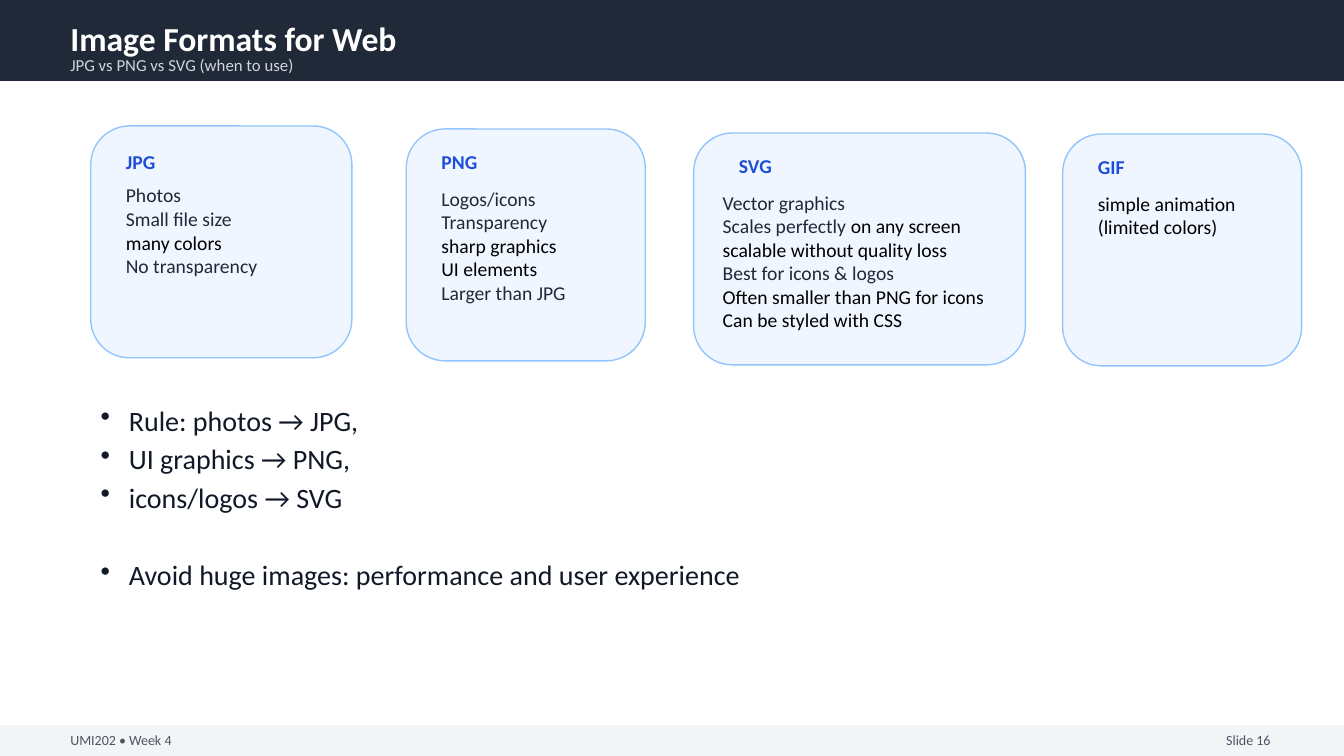
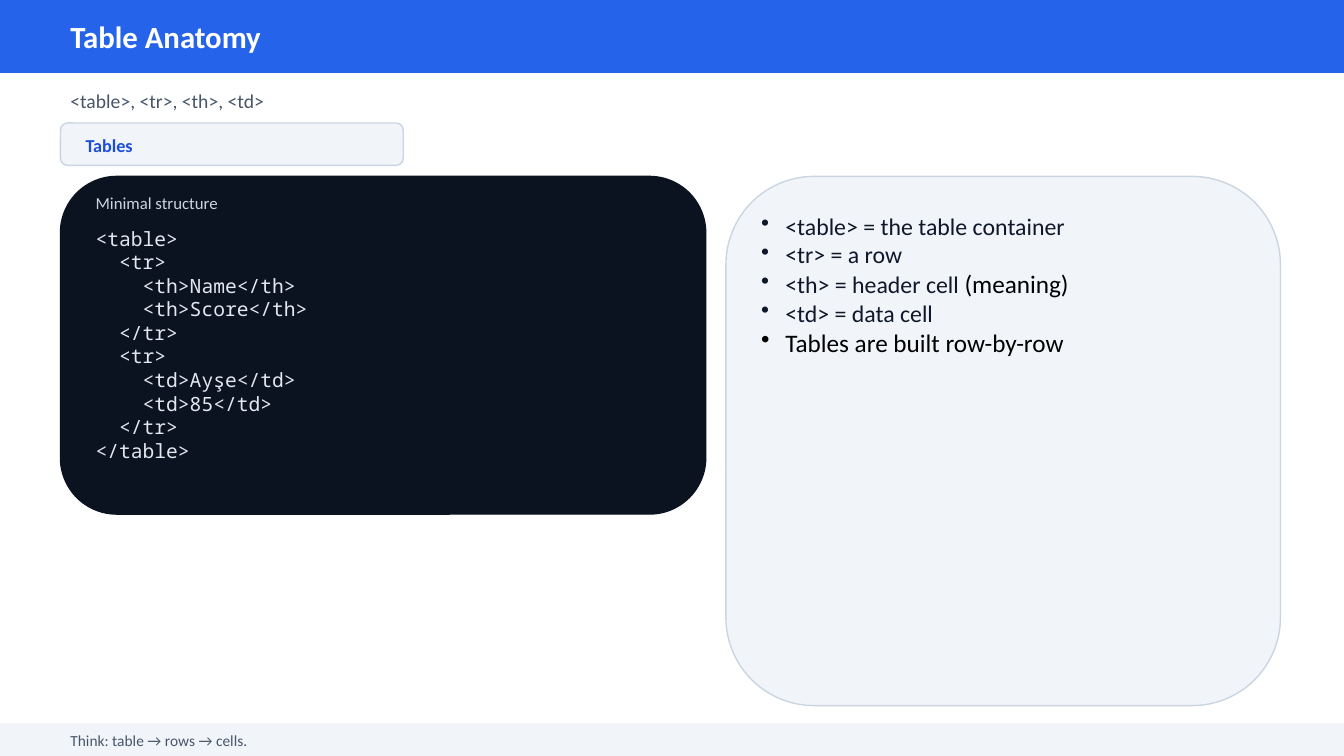
"""Build two lecture slides: image formats for the web and table anatomy."""
from lxml.etree import SubElement
from pptx import Presentation
from pptx.dml.color import RGBColor
from pptx.enum.shapes import MSO_SHAPE as Shape
from pptx.enum.text import MSO_ANCHOR as Anchor, PP_ALIGN as Align
from pptx.oxml.ns import qn
from pptx.util import Pt

PX = 9144
WIDTH, HEIGHT = 1333, 750
MARGIN = 60
BODY_FONT, CODE_FONT = "Calibri", "Noto Sans Mono"
WHITE, BLACK = "FFFFFF", "000000"
DARK, INK, NAVY = "1F2937", "111827", "0F172A"
BLUE, HEADING_BLUE = "2563EB", "1D4ED8"
CARD_FILL, CARD_LINE = "EFF6FF", "93C5FD"
PANEL_FILL, PANEL_LINE = "F1F5F9", "CBD5E1"
CODE_FILL, CODE_TEXT = "0B1220", "E2E8F0"
SLATE, GRAY, LIGHT_GRAY, FOOTER_GRAY = "475569", "4B5563", "D1D5DB", "F3F4F6"

rgb = RGBColor.from_string


def add_panel(slide, box, fill, line=None, kind=Shape.ROUNDED_RECTANGLE):
    """Add a filled shape, outlined in its fill colour by default."""
    shape = slide.shapes.add_shape(kind, *[value * PX for value in box])
    shape.shadow.inherit = False
    shape.fill.solid()
    shape.fill.fore_color.rgb = rgb(fill)
    shape.line.color.rgb = rgb(line or fill)
    shape.line.width = Pt(1)


def add_text(slide, box, lines, size, color, bold=False, font=BODY_FONT,
             anchor=Anchor.MIDDLE, align=Align.LEFT, indent=0, black_size=None):
    """Add text lines; the part of a line after a bar is black."""
    frame = slide.shapes.add_textbox(*[value * PX for value in box]).text_frame
    frame.word_wrap = True
    frame.vertical_anchor = anchor
    for index, line in enumerate(lines):
        paragraph = frame.add_paragraph() if index else frame.paragraphs[0]
        paragraph.alignment = align
        if indent:
            properties = paragraph._p.get_or_add_pPr()
            properties.set("marL", str(indent * PX))
            properties.set("indent", str(-indent * PX))
            SubElement(properties, qn("a:buChar")).set("char", "•")
        plain, _, black = line.partition("|")
        for text, run_color, run_size in ((plain, color, size), (black, BLACK, black_size or size)):
            if text:
                run = paragraph.add_run()
                run.text = text
                run.font.name = font
                run.font.size = Pt(run_size)
                run.font.bold = bold
                run.font.color.rgb = rgb(run_color)
    return frame.paragraphs


presentation = Presentation()
presentation.slide_width = WIDTH * PX
presentation.slide_height = HEIGHT * PX

frames = [
    ("Image Formats for Web", 24, (18, 40), 80, DARK,
     "JPG vs PNG vs SVG (when to use)", 12, (52, 25), LIGHT_GRAY,
     "UMI202 • Week 4", 10, (723, 22), 30, FOOTER_GRAY, GRAY),
    ("Table Anatomy", 22, (16, 40), 72, BLUE,
     "<table>, <tr>, <th>, <td>", 14, (82, 35), SLATE,
     "Think: table → rows → cells.", 11, (722, 25), 32, PANEL_FILL, SLATE),
]
slides = []
for (title, title_size, (title_top, title_height), band_height, band_fill,
     subtitle, subtitle_size, (subtitle_top, subtitle_height), subtitle_color,
     footer, footer_size, (footer_top, footer_text_height), footer_height,
     footer_fill, footer_color) in frames:
    slide = presentation.slides.add_slide(presentation.slide_layouts[6])
    slides.append(slide)
    add_panel(slide, (0, 0, WIDTH, band_height), band_fill, kind=Shape.RECTANGLE)
    add_text(slide, (MARGIN, title_top, 1220, title_height), [title], title_size, WHITE, bold=True)
    add_text(slide, (MARGIN, subtitle_top, 1220, subtitle_height), [subtitle],
             subtitle_size, subtitle_color)
    add_panel(slide, (0, HEIGHT - footer_height, WIDTH, footer_height), footer_fill,
              kind=Shape.RECTANGLE)
    add_text(slide, (MARGIN, footer_top, 800, footer_text_height), [footer],
             footer_size, footer_color)

formats_slide, table_slide = slides

add_text(formats_slide, (900, 723, 370, 22), ["Slide 16"], 10, GRAY, align=Align.RIGHT)
cards = [
    ("JPG", (90, 125, 259), (115, 34), (115, 176),
     ["Photos", "Small file size", "|many colors", "No transparency"]),
    ("PNG", (403, 128, 237), (428, 29), (428, 193),
     ["Logos/icons", "Transparency", "|sharp graphics", "|UI elements", "Larger than JPG"]),
    ("SVG", (688, 132, 329), (723, 29), (707, 284),
     ["Vector graphics", "Scales perfectly |on any screen",
      "|scalable without quality loss", "Best for icons & logos",
      "|Often smaller than PNG for icons", "|Can be styled with CSS"]),
    ("GIF", (1054, 133, 237), (1079, 29), (1079, 193),
     ["|simple animation (limited colors)"]),
]
for name, (left, top, width), (name_left, name_height), (body_left, body_width), lines in cards:
    add_panel(formats_slide, (left, top, width, 230), CARD_FILL, CARD_LINE)
    add_text(formats_slide, (name_left, top + 18, 172, name_height), [name], 14,
             HEADING_BLUE, bold=True)
    add_text(formats_slide, (body_left, top + 52, body_width, 165), lines, 14, DARK,
             anchor=Anchor.TOP)

rules = add_text(formats_slide, (90, 390, 1200, 260),
                 ["Rule: photos → JPG,", "UI graphics → PNG,", "icons/logos → SVG",
                  "Avoid huge images: performance and user experience"],
                 20, INK, anchor=Anchor.TOP, indent=28)
for paragraph in rules:
    paragraph.line_spacing = 1.15
rules[-1].space_before = Pt(27.5)

add_panel(table_slide, (MARGIN, 122, 340, 42), PANEL_FILL, PANEL_LINE)
add_text(table_slide, (75, 131, 315, 26), ["Tables"], 13, HEADING_BLUE, bold=True)

code = """<table>
  <tr>
    <th>Name</th>
    <th>Score</th>
  </tr>
  <tr>
    <td>Ayşe</td>
    <td>85</td>
  </tr>
</table>"""
add_panel(table_slide, (MARGIN, 175, 640, 335), CODE_FILL)
add_text(table_slide, (85, 187, 590, 28), ["Minimal structure"], 12, PANEL_LINE)
add_text(table_slide, (85, 220, 590, 275), code.splitlines(), 14, CODE_TEXT,
         font=CODE_FONT, anchor=Anchor.TOP)

add_panel(table_slide, (720, 175, 550, 525), PANEL_FILL, PANEL_LINE)
add_text(table_slide, (745, 205, 505, 176),
         ["<table> = the table container", "<tr> = a row", "<th> = header cell |(meaning)",
          "<td> = data cell", "|Tables are built row-by-row"],
         17, NAVY, anchor=Anchor.TOP, indent=24, black_size=18)

presentation.save("out.pptx")
